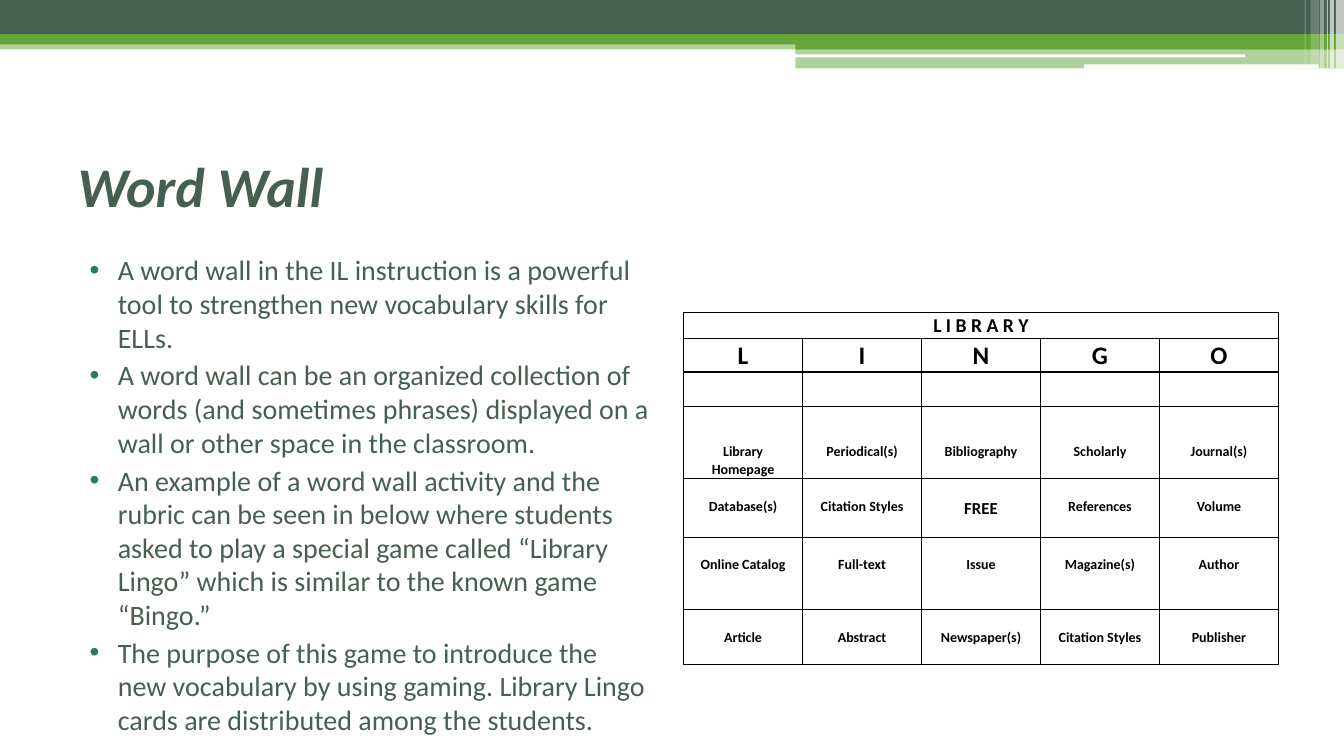
"""Build the Word Wall slide with its bullet list and Library Lingo card."""
from dataclasses import dataclass

from lxml.etree import SubElement
from pptx import Presentation
from pptx.dml.color import RGBColor
from pptx.enum.shapes import MSO_SHAPE
from pptx.enum.text import MSO_ANCHOR, MSO_AUTO_SIZE, PP_ALIGN
from pptx.oxml.ns import qn
from pptx.slide import Slide
from pptx.table import _Cell
from pptx.text.text import _Paragraph
from pptx.util import Emu, Pt

FONT = "Calibri"
DARK, GREEN, BULLET = "455F51", "63A537", "297D53"
WHITE, BLACK = "FFFFFF", "000000"


@dataclass(frozen=True)
class Band:
    """A rectangle of the header decoration, in px."""
    left: int
    top: int
    width: int
    height: int
    color: str
    opacity: int = 100
    rounded: bool = False


@dataclass(frozen=True)
class CardRow:
    """One row of the Library Lingo card."""
    height: int
    words: tuple[str, ...]
    size: int = 10
    margin_top: int = 18


BANDS = (
    Band(0, 40, 1333, 9, GREEN, 50),
    Band(0, 0, 1333, 34, DARK),
    Band(0, 34, 1333, 10, GREEN),
    Band(789, 39, 544, 10, GREEN),
    Band(789, 48, 544, 20, GREEN, 50),
    Band(788, 54, 447, 3, WHITE, rounded=True),
    Band(1075, 64, 233, 4, WHITE, rounded=True),
    Band(1325, 0, 8, 68, WHITE, 65),
    Band(1319, 0, 4, 68, WHITE, 65),
    Band(1316, 0, 1, 68, WHITE, 60),
    Band(1309, 0, 4, 68, WHITE, 40),
    Band(1300, 0, 8, 64, WHITE, 20),
    Band(1294, 0, 1, 64, WHITE, 30),
)

POINTS = (
    "A word wall in the IL instruction is a powerful tool to strengthen new "
    "vocabulary skills for ELLs.",
    "A word wall can be an organized collection of words (and sometimes "
    "phrases) displayed on a wall or other space in the classroom.",
    "An example of a word wall activity and the rubric can be seen in below "
    "where students asked to play a special game called “Library Lingo” which "
    "is similar to the known game “Bingo.”",
    "The purpose of this game to introduce the new vocabulary by using gaming. "
    "Library Lingo cards are distributed among the students.",
)

CARD = (
    CardRow(26, ("L I B R A R Y",), 14, 0),
    CardRow(33, tuple("LINGO"), 18, 0),
    CardRow(34, (), margin_top=0),
    CardRow(72, ("Library Homepage", "Periodical(s)", "Bibliography",
                 "Scholarly", "Journal(s)"), margin_top=36),
    CardRow(58, ("Database(s)", "Citation Styles", "FREE", "References", "Volume")),
    CardRow(72, ("Online Catalog", "Full-text", "Issue", "Magazine(s)", "Author")),
    CardRow(54, ("Article", "Abstract", "Newspaper(s)", "Citation Styles",
                 "Publisher")),
)
COLUMNS = 5
COLUMN_WIDTH = 118


def px(length: int) -> Emu:
    """Turn px, 100 to the inch, into EMU."""
    return Emu(length * 9144)


def rgb(color: str) -> RGBColor:
    """Turn a hex string into a colour."""
    return RGBColor.from_string(color)


def write(paragraph: _Paragraph, text: str, *, size: int, color: str,
          bold: bool = False, italic: bool = False,
          align: PP_ALIGN = PP_ALIGN.LEFT, spacing: float = 1.0,
          before: int = 0) -> None:
    """Write formatted text into a paragraph."""
    paragraph.alignment = align
    paragraph.line_spacing = spacing
    paragraph.space_before = Pt(before)
    run = paragraph.add_run()
    run.text = text
    run.font.name = FONT
    run.font.size = Pt(size)
    run.font.bold = bold
    run.font.italic = italic
    run.font.color.rgb = rgb(color)


def add_bullet(paragraph: _Paragraph) -> None:
    """Give a paragraph a hanging coloured bullet."""
    properties = paragraph._p.get_or_add_pPr()
    properties.set("marL", str(px(40)))
    properties.set("indent", str(px(-28)))
    bullet_color = SubElement(properties, qn("a:buClr"))
    SubElement(bullet_color, qn("a:srgbClr"), val=BULLET)
    SubElement(properties, qn("a:buFont"), typeface="Arial")
    SubElement(properties, qn("a:buChar"), char="•")


def draw_band(slide: Slide, band: Band) -> None:
    """Draw one header band."""
    preset = MSO_SHAPE.ROUNDED_RECTANGLE if band.rounded else MSO_SHAPE.RECTANGLE
    shape = slide.shapes.add_shape(
        preset, px(band.left), px(band.top), px(band.width), px(band.height))
    shape.shadow.inherit = False
    shape.fill.solid()
    shape.fill.fore_color.rgb = rgb(band.color)
    shape.line.fill.background()
    if band.opacity < 100:
        fill_color = shape.element.find(".//" + qn("a:srgbClr"))
        SubElement(fill_color, qn("a:alpha"), val=str(band.opacity * 1000))


def draw_title(slide: Slide) -> None:
    """Place and fill the title."""
    title = slide.shapes.title
    title.left, title.top, title.width, title.height = map(px, (67, 125, 1200, 117))
    frame = title.text_frame
    frame.auto_size = MSO_AUTO_SIZE.NONE
    frame.vertical_anchor = MSO_ANCHOR.MIDDLE
    write(frame.paragraphs[0], "Word Wall", size=40, color=DARK, bold=True, italic=True)


def draw_points(slide: Slide) -> None:
    """Draw the bullet list."""
    frame = slide.shapes.add_textbox(px(67), px(246), px(589), px(475)).text_frame
    frame.word_wrap = True
    for index, point in enumerate(POINTS):
        paragraph = frame.add_paragraph() if index else frame.paragraphs[0]
        write(paragraph, point, size=20, color=DARK, before=3)
        add_bullet(paragraph)


def format_cell(cell: _Cell, margin_top: int) -> None:
    """Set a cell's margins, borders and fill."""
    cell.margin_left = cell.margin_right = px(7)
    cell.margin_top, cell.margin_bottom = px(margin_top), px(0)
    properties = cell._tc.get_or_add_tcPr()
    for side in ("a:lnL", "a:lnR", "a:lnT", "a:lnB"):
        border = SubElement(properties, qn(side), w=str(Pt(1)))
        border_fill = SubElement(border, qn("a:solidFill"))
        SubElement(border_fill, qn("a:srgbClr"), val=BLACK)
    cell.fill.background()


def draw_card(slide: Slide) -> None:
    """Draw the Library Lingo card as a table."""
    card = slide.shapes.add_table(
        len(CARD), COLUMNS, px(678), px(310), px(COLUMNS * COLUMN_WIDTH),
        px(sum(row.height for row in CARD))).table
    card.first_row = card.horz_banding = False
    for column in card.columns:
        column.width = px(COLUMN_WIDTH)
    for row_index, row in enumerate(CARD):
        card.rows[row_index].height = px(row.height)
        for column_index in range(COLUMNS):
            format_cell(card.cell(row_index, column_index), row.margin_top)
        for column_index, word in enumerate(row.words):
            paragraph = card.cell(row_index, column_index).text_frame.paragraphs[0]
            write(paragraph, word, size=12 if word == "FREE" else row.size,
                  color=BLACK, bold=True, align=PP_ALIGN.CENTER, spacing=1.07)
    card.cell(0, 0).merge(card.cell(0, COLUMNS - 1))


def main() -> None:
    """Build and save the presentation."""
    presentation = Presentation()
    presentation.slide_width, presentation.slide_height = px(1333), px(750)
    slide = presentation.slides.add_slide(presentation.slide_layouts[5])
    for band in BANDS:
        draw_band(slide, band)
    draw_title(slide)
    draw_points(slide)
    draw_card(slide)
    presentation.save("out.pptx")


if __name__ == "__main__":
    main()
